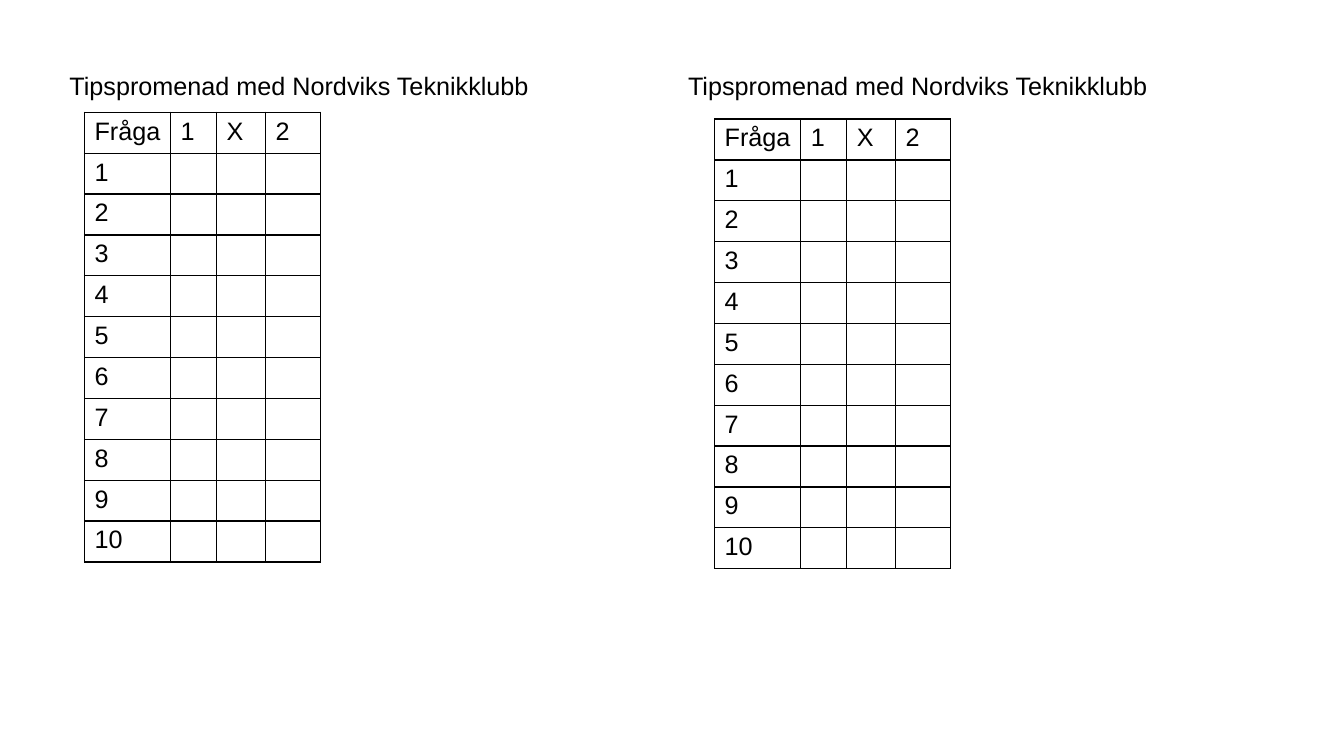
from pptx import Presentation
from pptx.dml.color import RGBColor
from pptx.enum.text import MSO_AUTO_SIZE as AutoSize
from pptx.oxml import parse_xml
from pptx.oxml.ns import nsdecls
from pptx.util import Cm, Pt

COLORS = {"text": "000000", "border": "000000"}
TITLE = "Tipspromenad med Nordviks Teknikklubb"
HEADER = ["Fråga", "1", "X", "2"]
COL_WIDTHS = [2.17, 1.16, 1.23, 1.39]
ROW_HEIGHT = 1.03
QUESTIONS = 10
COUPONS = [(1.5, 2.13, 2.83), (17.09, 18.01, 3.0)]


def write(tf, text, size=18, font="Arial", color="text", bold=False):
    r = tf.paragraphs[0].add_run()
    r.text = text
    r.font.size = Pt(size)
    r.font.name = font
    r.font.bold = bold
    r.font.color.rgb = RGBColor.from_string(COLORS[color])


def add_borders(cell, width=1):
    tcPr = cell._tc.get_or_add_tcPr()
    for side in ("lnL", "lnR", "lnT", "lnB"):
        tcPr.append(parse_xml(
            f'<a:{side} {nsdecls("a")} w="{Pt(width)}"><a:solidFill>'
            f'<a:srgbClr val="{COLORS["border"]}"/></a:solidFill></a:{side}>'))


prs = Presentation()
prs.slide_width, prs.slide_height = Cm(33.87), Cm(19.05)
s = prs.slides.add_slide(prs.slide_layouts[6])

rows = [HEADER] + [[str(n), "", "", ""] for n in range(1, QUESTIONS + 1)]

for title_left, table_left, table_top in COUPONS:
    title = s.shapes.add_textbox(Cm(title_left), Cm(1.65), Cm(13.72), Cm(1.03))
    tf = title.text_frame
    tf.word_wrap = True
    tf.auto_size = AutoSize.SHAPE_TO_FIT_TEXT
    write(tf, TITLE)

    table = s.shapes.add_table(
        len(rows), len(HEADER), Cm(table_left), Cm(table_top),
        Cm(sum(COL_WIDTHS)), Cm(ROW_HEIGHT * len(rows))).table
    table.first_row = False
    table.horz_banding = False
    for column, width in zip(table.columns, COL_WIDTHS):
        column.width = Cm(width)
    for i, values in enumerate(rows):
        table.rows[i].height = Cm(ROW_HEIGHT)
        for j, value in enumerate(values):
            cell = table.cell(i, j)
            add_borders(cell)
            cell.fill.background()
            if value:
                write(cell.text_frame, value)

prs.save("out.pptx")
